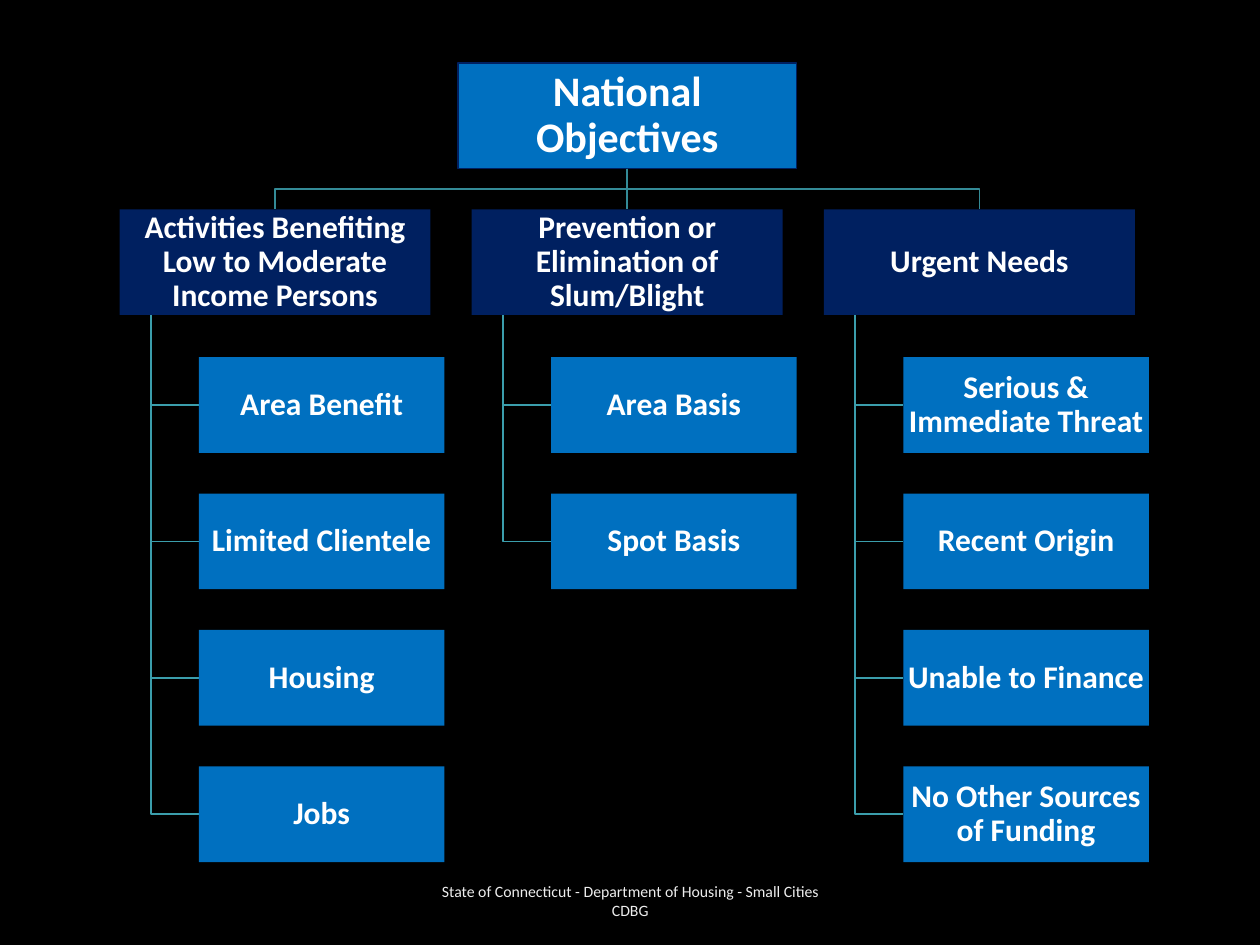
from lxml import etree
from pptx import Presentation
from pptx.dml.color import RGBColor
from pptx.enum.shapes import MSO_CONNECTOR, MSO_SHAPE
from pptx.enum.text import MSO_ANCHOR, MSO_AUTO_SIZE, PP_ALIGN
from pptx.oxml.ns import qn
from pptx.util import Cm, Pt

COLORS = {"back": "000000", "blue": "0070C0", "navy": "002060",
          "trunk": "348B97", "branch": "3B9EAC", "text": "FFFFFF",
          "footer": "EDEDED"}

# Chart geometry in centimetres
ROOT = (9.23, 1.27, 6.83, 2.13)
HEAD_X, HEAD_Y, HEAD_W, HEAD_H = 2.41, 4.22, 6.27, 2.13
LEAF_DX, LEAF_Y, LEAF_W, LEAF_H = 1.6, 7.2, 4.95, 1.93
COL_STEP, ROW_STEP, STEM_DX = 7.1, 2.75, 0.63

BRANCHES = [
    ("Activities Benefiting Low to Moderate Income Persons",
     ["Area Benefit", "Limited Clientele", "Housing", "Jobs"]),
    ("Prevention or Elimination of Slum/Blight",
     ["Area Basis", "Spot Basis"]),
    ("Urgent Needs",
     ["Serious & Immediate Threat", "Recent Origin", "Unable to Finance",
      "No Other Sources of Funding"]),
]


def rgb(name):
    return RGBColor.from_string(COLORS[name])


def write(sp, text, size, bold=True, color="text", inset=0.03, spacing=0.9):
    tf = sp.text_frame
    frame = {"word_wrap": True, "auto_size": MSO_AUTO_SIZE.NONE,
             "vertical_anchor": MSO_ANCHOR.MIDDLE}
    if inset is not None:
        for side in ("left", "right", "top", "bottom"):
            frame[f"margin_{side}"] = Cm(inset)
    for key, value in frame.items():
        setattr(tf, key, value)
    p = tf.paragraphs[0]
    p.alignment, p.line_spacing = PP_ALIGN.CENTER, spacing
    r = p.add_run()
    r.text = text
    for key, value in {"name": "Calibri", "size": Pt(size), "bold": bold}.items():
        setattr(r.font, key, value)
    r.font.color.rgb = rgb(color)


def paint(sp, fill):
    sp.fill.solid()
    sp.fill.fore_color.rgb = rgb(fill)


def add_root(s, text):
    sp = s.shapes.title
    for key, value in zip(("left", "top", "width", "height"), ROOT):
        setattr(sp, key, Cm(value))
    paint(sp, "blue")
    sp.line.color.rgb = rgb("navy")
    sp.line.width = Pt(1)
    write(sp, text, 24, inset=0.05)


def add_box(s, text, x, y, w, h, fill):
    sp = s.shapes.add_shape(MSO_SHAPE.RECTANGLE, Cm(x), Cm(y), Cm(w), Cm(h))
    sp.shadow.inherit = False
    paint(sp, fill)
    sp.line.fill.background()
    write(sp, text, 18)


def add_path(s, points, color):
    """Straight connector for two points, open outline for more."""
    pts = [(Cm(x), Cm(y)) for x, y in points]
    if len(pts) == 2:
        sp = s.shapes.add_connector(MSO_CONNECTOR.STRAIGHT, *pts[0], *pts[1])
        etree.SubElement(sp._element.spPr, qn("a:effectLst"))
    else:
        fb = s.shapes.build_freeform(*pts[0])
        fb.add_line_segments(pts[1:], close=False)
        sp = fb.convert_to_shape()
        sp.fill.background()
        sp.shadow.inherit = False
    sp.line.color.rgb = rgb(color)
    sp.line.width = Pt(1)


def add_trunk(s, x):
    root_x, root_y = ROOT[0] + ROOT[2] / 2, ROOT[1] + ROOT[3]
    mid_y = (root_y + HEAD_Y) / 2
    points = [(root_x, root_y), (x, HEAD_Y)]
    if abs(x - root_x) > 0.1:
        points[1:1] = [(root_x, mid_y), (x, mid_y)]
    add_path(s, points, "trunk")


def add_branch(s, col, head, leaves):
    x = HEAD_X + col * COL_STEP
    stem_x, leaf_x = x + STEM_DX, x + LEAF_DX
    add_trunk(s, x + HEAD_W / 2)
    add_box(s, head, x, HEAD_Y, HEAD_W, HEAD_H, "navy")
    for row, leaf in enumerate(leaves):
        y = LEAF_Y + row * ROW_STEP
        mid_y = y + LEAF_H / 2
        add_path(s, [(stem_x, HEAD_Y + HEAD_H), (stem_x, mid_y),
                     (leaf_x, mid_y)], "branch")
        add_box(s, leaf, leaf_x, y, LEAF_W, LEAF_H, "blue")


def add_footer(s, text):
    sp = s.shapes.add_textbox(Cm(8.41), Cm(17.65), Cm(8.59), Cm(1.02))
    write(sp, text, 9, bold=False, color="footer", inset=None, spacing=1.0)


def main():
    prs = Presentation()
    prs.slide_width, prs.slide_height = Cm(25.4), Cm(19.05)
    s = prs.slides.add_slide(prs.slide_layouts[5])
    paint(s.background, "back")

    # Organisation chart
    add_root(s, "National Objectives")
    for col, (head, leaves) in enumerate(BRANCHES):
        add_branch(s, col, head, leaves)

    # Footer
    add_footer(s, "State of Connecticut - Department of Housing - Small Cities CDBG")
    prs.save("out.pptx")


if __name__ == "__main__":
    main()
